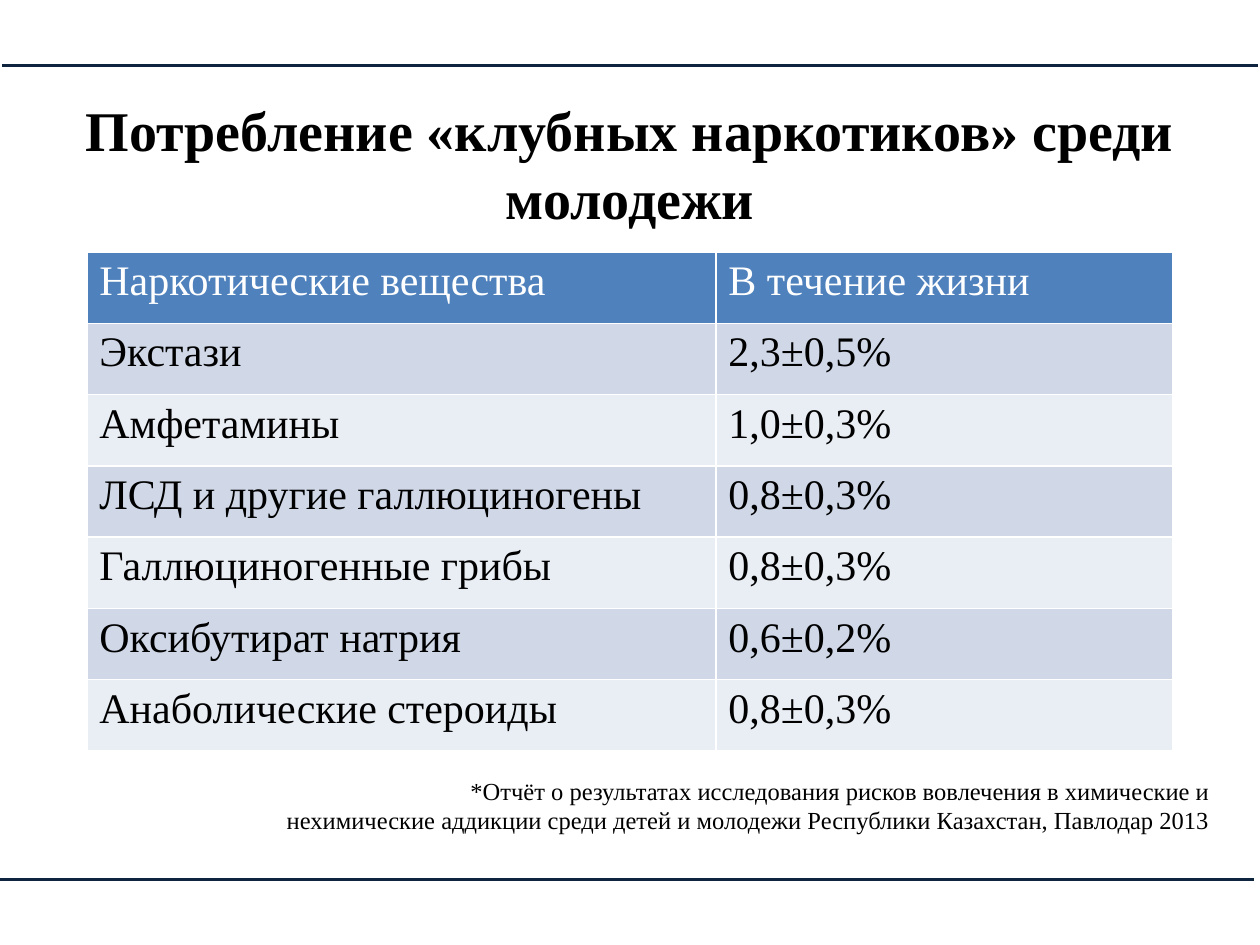
from lxml import etree
from pptx import Presentation
from pptx import util as u
from pptx.dml.color import RGBColor
from pptx.enum import shapes, text
from pptx.oxml.ns import qn

BLACK = RGBColor(0x00, 0x00, 0x00)
WHITE = RGBColor(0xFF, 0xFF, 0xFF)
NAVY = RGBColor(0x0F, 0x24, 0x3E)
HEADER_BLUE = RGBColor(0x4F, 0x81, 0xBD)
BANDS = [RGBColor(0xE9, 0xED, 0xF4), RGBColor(0xD0, 0xD8, 0xE8)]

RATES = [
    ("Наркотические вещества", "В течение жизни"),
    ("Экстази", "2,3±0,5%"),
    ("Амфетамины", "1,0±0,3%"),
    ("ЛСД и другие галлюциногены", "0,8±0,3%"),
    ("Галлюциногенные грибы", "0,8±0,3%"),
    ("Оксибутират натрия", "0,6±0,2%"),
    ("Анаболические стероиды", "0,8±0,3%"),
]
CITATION = [
    "*Отчёт о результатах исследования рисков вовлечения в химические и",
    "нехимические аддикции среди детей и молодежи Республики Казахстан, Павлодар 2013",
]


def style(paragraph, size, color, bold=False):
    font = paragraph.font
    font.name = "Times New Roman"
    font.size = u.Pt(size)
    font.bold = bold
    font.color.rgb = color


prs = Presentation()
prs.slide_width, prs.slide_height = u.Cm(25.4), u.Cm(19.05)
slide = prs.slides.add_slide(prs.slide_layouts[5])

# Title
title = slide.shapes.title
title.left, title.top = u.Cm(1.27), u.Cm(1.88)
title.width, title.height = u.Cm(22.86), u.Cm(2.82)
title.text_frame.text = "Потребление «клубных наркотиков» среди молодежи"
title.text_frame.vertical_anchor = text.MSO_ANCHOR.MIDDLE
heading = title.text_frame.paragraphs[0]
heading.alignment = text.PP_ALIGN.CENTER
style(heading, 32, BLACK, bold=True)

# Lifetime use by substance
rates = slide.shapes.add_table(
    len(RATES), 2, u.Cm(1.75), u.Cm(5.08), u.Cm(21.9), u.Cm(10.06)
).table
rates.columns[0].width, rates.columns[1].width = u.Cm(12.68), u.Cm(9.22)
for row, values in enumerate(RATES):
    for column, value in enumerate(values):
        cell = rates.cell(row, column)
        cell.text = value
        cell.fill.solid()
        cell.fill.fore_color.rgb = BANDS[row % 2] if row else HEADER_BLUE
        style(cell.text_frame.paragraphs[0], 24, BLACK if row else WHITE)

# Citation
citation = slide.shapes.add_textbox(
    u.Cm(2.49), u.Cm(15.52), u.Cm(22.28), u.Cm(1.45)
).text_frame
citation.word_wrap = True
citation.margin_right = u.Cm(0.38)
citation.text = "\n".join(CITATION)
for line in citation.paragraphs:
    line.alignment = text.PP_ALIGN.RIGHT
    style(line, 14, BLACK)

# Rules at the foot and the head
for left, right, y in [(0, 25.27, 17.73), (0.05, 25.35, 1.32)]:
    rule = slide.shapes.add_connector(
        shapes.MSO_CONNECTOR.STRAIGHT, u.Cm(left), u.Cm(y), u.Cm(right), u.Cm(y)
    )
    rule.line.color.rgb = NAVY
    rule.line.width = u.Pt(2.25)
    etree.SubElement(rule._element.spPr, qn("a:effectLst"))

prs.save("out.pptx")
